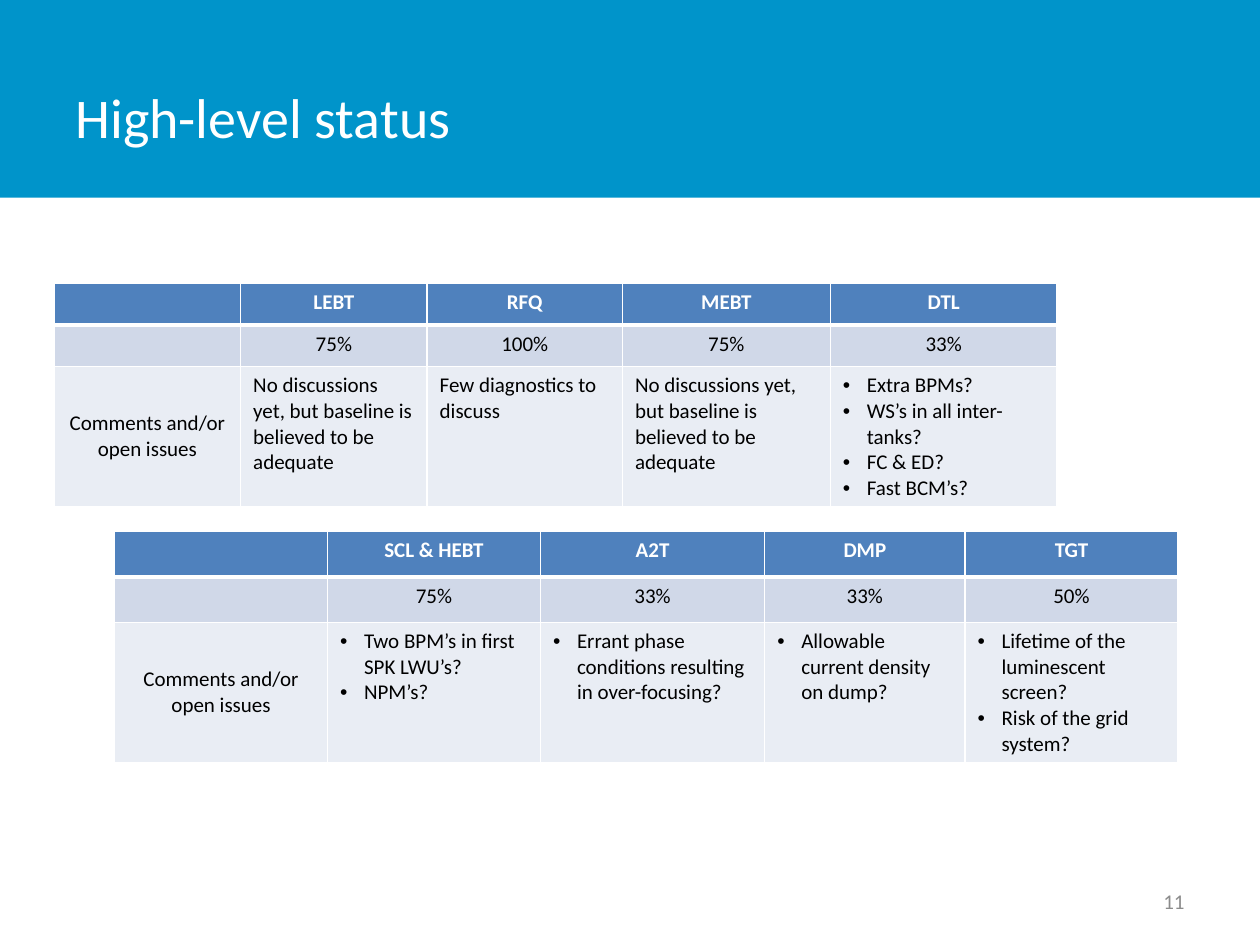
from dataclasses import dataclass

from lxml.etree import SubElement
from pptx import Presentation
from pptx.dml.color import RGBColor
from pptx.enum.shapes import MSO_SHAPE
from pptx.enum.text import MSO_ANCHOR, PP_ALIGN
from pptx.oxml import parse_xml
from pptx.oxml.ns import nsdecls, qn
from pptx.util import Inches, Pt


@dataclass(frozen=True)
class Theme:
    font: str = "Calibri"
    banner: str = "0094CA"
    header: str = "4F81BD"
    status: str = "D0D8E8"
    comments: str = "E9EDF4"
    white: str = "FFFFFF"
    black: str = "000000"
    gray: str = "8C8C8C"
    title_size: int = 32
    body_size: int = 12
    grid_width: int = 1
    header_rule_width: int = 3


THEME = Theme()
COMMENTS_LABEL = "Comments and/or open issues"
NOT_DISCUSSED = "No discussions yet, but baseline is believed to be adequate"

FRONT_SECTIONS = [
    ("LEBT", "75%", NOT_DISCUSSED),
    ("RFQ", "100%", "Few diagnostics to discuss"),
    ("MEBT", "75%", NOT_DISCUSSED),
    ("DTL", "33%", ["Extra BPMs?", "WS’s in all inter-tanks?", "FC & ED?", "Fast BCM’s?"]),
]
BACK_SECTIONS = [
    ("SCL & HEBT", "75%", ["Two BPM’s in first SPK LWU’s?", "NPM’s?"]),
    ("A2T", "33%", ["Errant phase conditions resulting in over-focusing?"]),
    ("DMP", "33%", ["Allowable current density on dump?"]),
    ("TGT", "50%", ["Lifetime of the luminescent screen?", "Risk of the grid system?"]),
]


def write_text(frame, text, size=THEME.body_size, color=THEME.black, bold=False,
               align=PP_ALIGN.LEFT):
    bulleted = isinstance(text, list)
    for index, line in enumerate(text if bulleted else [text]):
        paragraph = frame.paragraphs[0] if index == 0 else frame.add_paragraph()
        paragraph.alignment = align
        if bulleted:
            add_bullet(paragraph)
        if not line:
            SubElement(paragraph._p, qn("a:endParaRPr"), sz=str(size * 100))
            continue
        run = paragraph.add_run()
        run.text = line
        run.font.name = THEME.font
        run.font.size = Pt(size)
        run.font.bold = bold
        run.font.color.rgb = RGBColor.from_string(color)


def add_bullet(paragraph):
    properties = paragraph._p.get_or_add_pPr()
    properties.set("marL", str(Inches(0.19)))
    properties.set("indent", str(Inches(-0.19)))
    SubElement(properties, qn("a:buFont"), typeface="Arial")
    SubElement(properties, qn("a:buChar"), char="•")


def add_banner(slide, height):
    shape = slide.shapes.add_shape(MSO_SHAPE.RECTANGLE, 0, 0, Inches(10), Inches(height))
    shape.shadow.inherit = False
    shape.fill.solid()
    shape.fill.fore_color.rgb = RGBColor.from_string(THEME.banner)
    shape.line.fill.background()


def add_text_box(slide, left, top, width, height, text, **text_format):
    box = slide.shapes.add_textbox(Inches(left), Inches(top), Inches(width), Inches(height))
    box.text_frame.word_wrap = True
    box.text_frame.vertical_anchor = MSO_ANCHOR.MIDDLE
    write_text(box.text_frame, text, **text_format)


def set_borders(cell, top, bottom):
    sides = {"L": THEME.grid_width, "R": THEME.grid_width, "T": top, "B": bottom}
    properties = cell._tc.get_or_add_tcPr()
    for index, (side, width) in enumerate(sides.items()):
        properties.insert(index, parse_xml(
            f'<a:ln{side} {nsdecls("a")} w="{Pt(width)}"><a:solidFill>'
            f'<a:srgbClr val="{THEME.white}"/></a:solidFill></a:ln{side}>'))


def add_status_table(slide, left, top, column_widths, row_heights, sections):
    columns = [("", "", COMMENTS_LABEL), *sections]
    table = slide.shapes.add_table(
        len(row_heights), len(columns), Inches(left), Inches(top),
        Inches(sum(column_widths)), Inches(sum(row_heights))).table
    for column, width in zip(table.columns, column_widths):
        column.width = Inches(width)
    for row, height in zip(table.rows, row_heights):
        row.height = Inches(height)

    fills = (THEME.header, THEME.status, THEME.comments)
    thin, thick = THEME.grid_width, THEME.header_rule_width
    rules = (thin, thick, thin, thin)
    for column_index, entries in enumerate(columns):
        for row_index, text in enumerate(entries):
            cell = table.cell(row_index, column_index)
            is_header = row_index == 0
            is_label = column_index == 0
            centered = is_label or row_index < 2
            write_text(cell.text_frame, text, bold=is_header,
                       color=THEME.white if is_header else THEME.black,
                       align=PP_ALIGN.CENTER if centered else PP_ALIGN.LEFT)
            cell.vertical_anchor = MSO_ANCHOR.MIDDLE if is_label else MSO_ANCHOR.TOP
            cell.fill.solid()
            cell.fill.fore_color.rgb = RGBColor.from_string(fills[row_index])
            set_borders(cell, rules[row_index], rules[row_index + 1])


def main():
    presentation = Presentation()
    presentation.slide_width = Inches(10)
    presentation.slide_height = Inches(7.5)
    slide = presentation.slides.add_slide(presentation.slide_layouts[6])

    add_banner(slide, 1.57)
    add_text_box(slide, 0.5, 0.3, 7.81, 1.25, "High-level status",
                 size=THEME.title_size, color=THEME.white)
    add_status_table(slide, 0.43, 2.25, (1.48, 1.48, 1.55, 1.65, 1.8),
                     (0.33, 0.33, 1.11), FRONT_SECTIONS)
    add_text_box(slide, 7.17, 6.95, 2.33, 0.4, "11",
                 color=THEME.gray, align=PP_ALIGN.RIGHT)
    add_status_table(slide, 0.91, 4.22, (1.69, 1.69, 1.78, 1.59, 1.69),
                     (0.36, 0.36, 1.11), BACK_SECTIONS)
    presentation.save("out.pptx")


if __name__ == "__main__":
    main()
